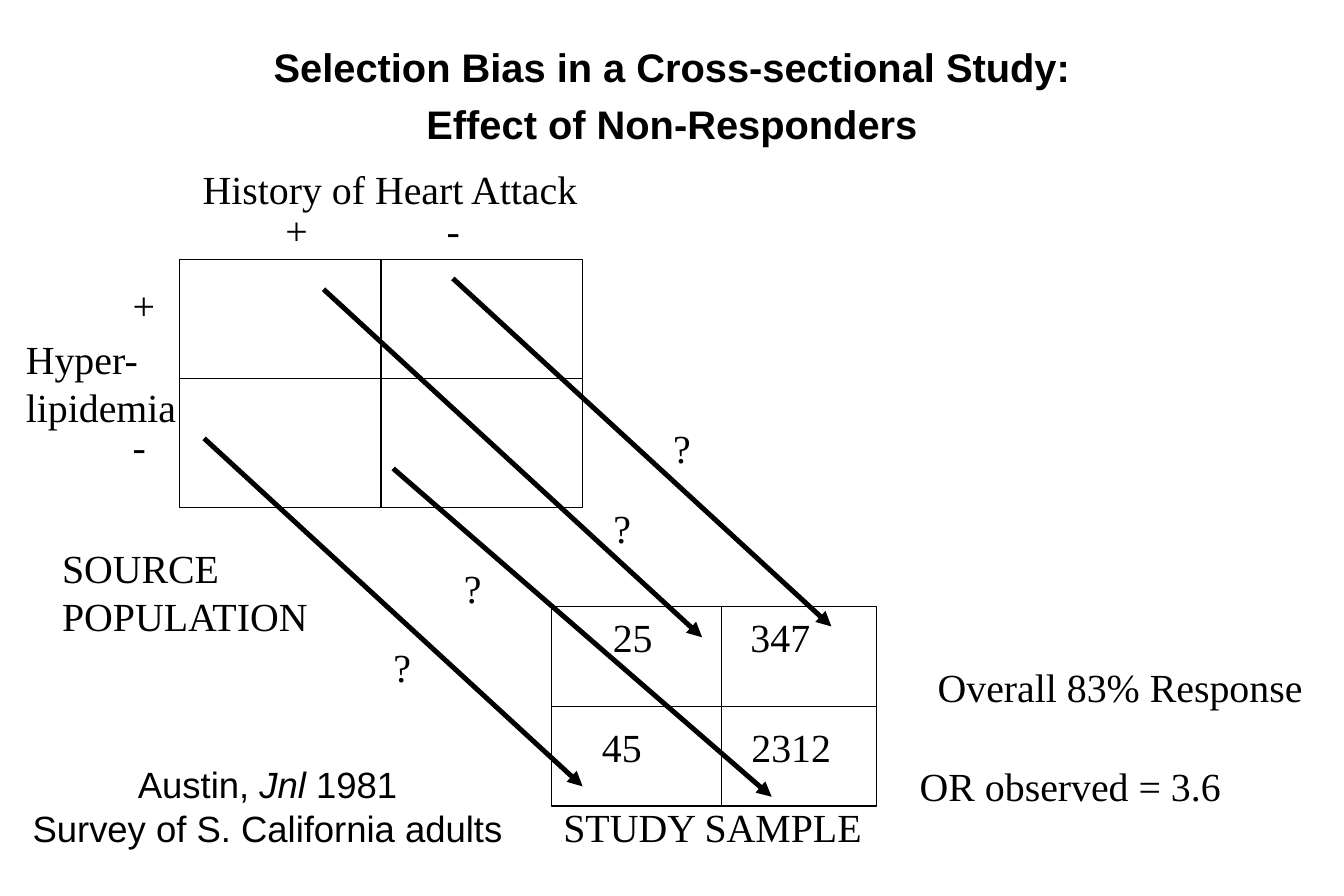
from dataclasses import dataclass

from lxml.etree import SubElement
from pptx import Presentation
from pptx.dml.color import RGBColor
from pptx.enum.shapes import MSO_CONNECTOR as Link, MSO_SHAPE as Kind
from pptx.enum.text import PP_ALIGN as Align
from pptx.oxml.ns import qn
from pptx.util import Cm, Pt


@dataclass(frozen=True)
class Theme:
    ink: RGBColor = RGBColor(0, 0, 0)
    serif: str = "Times New Roman"
    sans: str = "Arial"
    body: Pt = Pt(24)
    cite: Pt = Pt(22)
    thin: Pt = Pt(0.75)
    thick: Pt = Pt(3)


theme = Theme()
deck = Presentation()
deck.slide_width, deck.slide_height = Cm(28.58), Cm(19.05)
slide = deck.slides.add_slide(deck.slide_layouts[6])
shapes = slide.shapes


def draw_line(x1, y1, x2, y2, width):
    line = shapes.add_connector(Link.STRAIGHT, Cm(x1), Cm(y1), Cm(x2), Cm(y2))
    line.line.color.rgb = theme.ink
    line.line.width = width
    SubElement(line._element.spPr, qn("a:effectLst"))
    return line


def add_label(text, x, y, w, align=Align.LEFT, font=theme.serif, size=theme.body):
    """Add a text box with one paragraph per line of text; return the paragraphs."""
    lines = text.split("\n")
    box = shapes.add_textbox(Cm(x), Cm(y), Cm(w), Cm(1.27 * len(lines)))
    frame = box.text_frame
    frame.word_wrap = True
    frame.text = text
    for para in frame.paragraphs:
        para.alignment = align
        para.font.name = font
        para.font.size = size
        para.font.color.rgb = theme.ink
    return frame.paragraphs


# Two-by-two grids: left, top, width, height, column split, row split
source = (3.81, 5.51, 8.58, 5.28, 8.1, 8.05)
sample = (11.73, 12.9, 6.91, 4.24, 15.34, 15.02)
rects, walls, floors = [], [], []
for x, y, w, h, col, row in (source, sample):
    rect = shapes.add_shape(Kind.RECTANGLE, Cm(x), Cm(y), Cm(w), Cm(h))
    rect.shadow.inherit = False
    rect.fill.background()
    rect.line.color.rgb = theme.ink
    rect.line.width = theme.thin
    rects.append(rect)
    walls.append(draw_line(col, y, col, y + h, theme.thin))
    floors.append(draw_line(x, row, x + w, row, theme.thin))

# The source column split and the sample row split sit at mid-side
for line, rect, start, end in ((walls[0], rects[0], 0, 2), (floors[1], rects[1], 1, 3)):
    line.begin_connect(rect, start)
    line.end_connect(rect, end)

# Title and citation
title = add_label(
    "Selection Bias in a Cross-sectional Study:\nEffect of Non-Responders",
    0, 0.79, 28.58, Align.CENTER, theme.sans)
for para in title:
    para.font.bold = True
title[1].space_before = Pt(5.5)

cite = add_label("Austin, \nSurvey of S. California adults",
                 0, 16.08, 11.38, Align.CENTER, theme.sans, theme.cite)
for text, slant in (("Jnl", True), (" 1981", False)):
    run = cite[0].add_run()
    run.text = text
    run.font.italic = slant

# Labels: text, left, top, width
for label in (
    ("History of Heart Attack", 4.06, 3.38, 9),
    ("+", 5.82, 4.24, 1.12),
    ("-", 9.25, 4.24, 1.12),
    ("+", 2.57, 5.84, 1.12),
    ("Hyper-lipidemia", 0.3, 6.99, 4.55),
    ("-", 2.57, 8.84, 1.12),
    ("SOURCE POPULATION", 1.07, 11.43, 6.35),
    ("STUDY SAMPLE", 11.73, 16.94, 7.5),
    ("Overall 83% Response", 19.69, 13.97, 8.89),
):
    add_label(*label)

for label in (
    ("OR observed = 3.6", 18.95, 16.08, 7.62),
    ("25", 12.4, 12.9, 2.11),
    ("347", 15.54, 12.9, 2.11),
    ("45", 12.17, 15.24, 2.11),
    ("2312", 15.34, 15.24, 2.97),
):
    add_label(*label, Align.CENTER)

# Arrows share one run: start x, start y, drop, then the place of the question mark
reach = 8.05
for x, y, drop, ask_x, ask_y in (
    (6.88, 6.15, 7.4, 12.6, 10.59),
    (9.63, 5.92, 7.4, 13.87, 8.89),
    (8.36, 9.96, 6.98, 9.42, 11.86),
    (4.34, 9.32, 7.4, 7.92, 13.54),
):
    arrow = draw_line(x, y, x + reach, y + drop, theme.thick)
    SubElement(arrow.line._get_or_add_ln(), qn("a:tailEnd"), type="triangle")
    add_label("?", ask_x, ask_y, 1.27, Align.CENTER)

deck.save("out.pptx")
